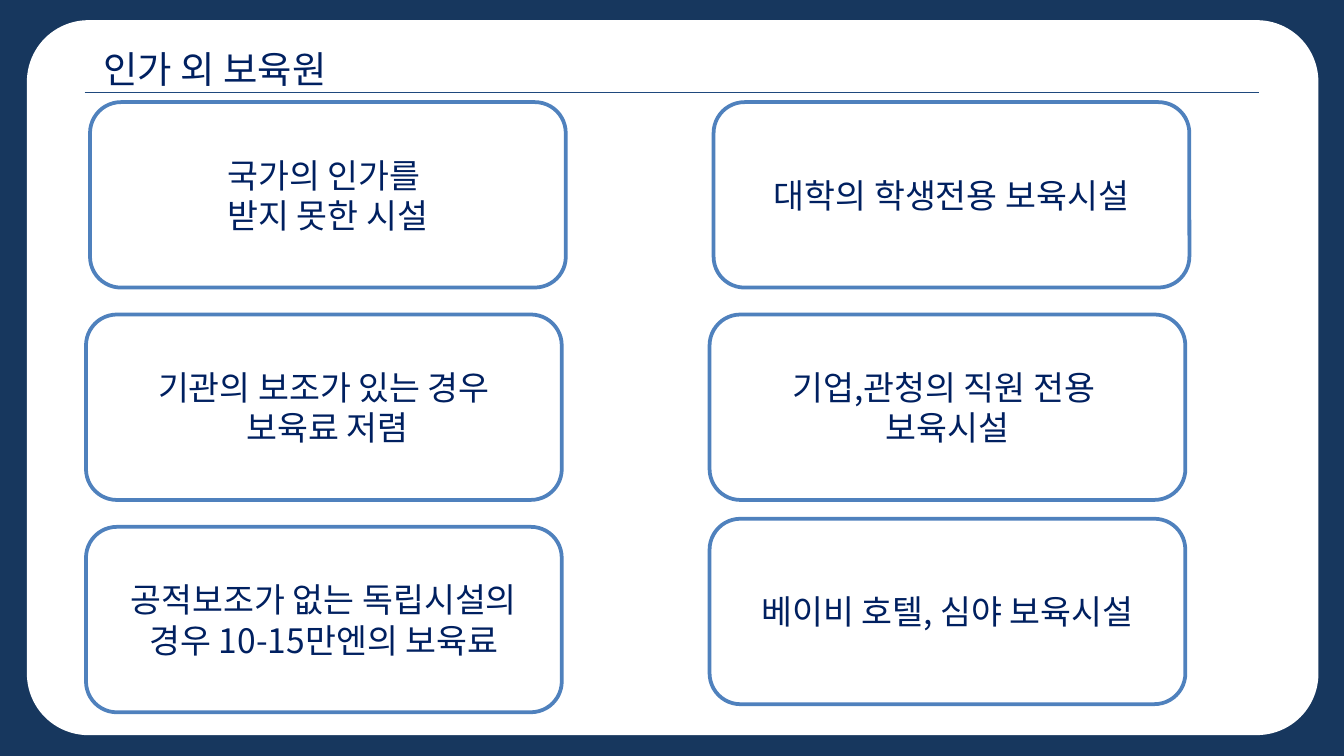
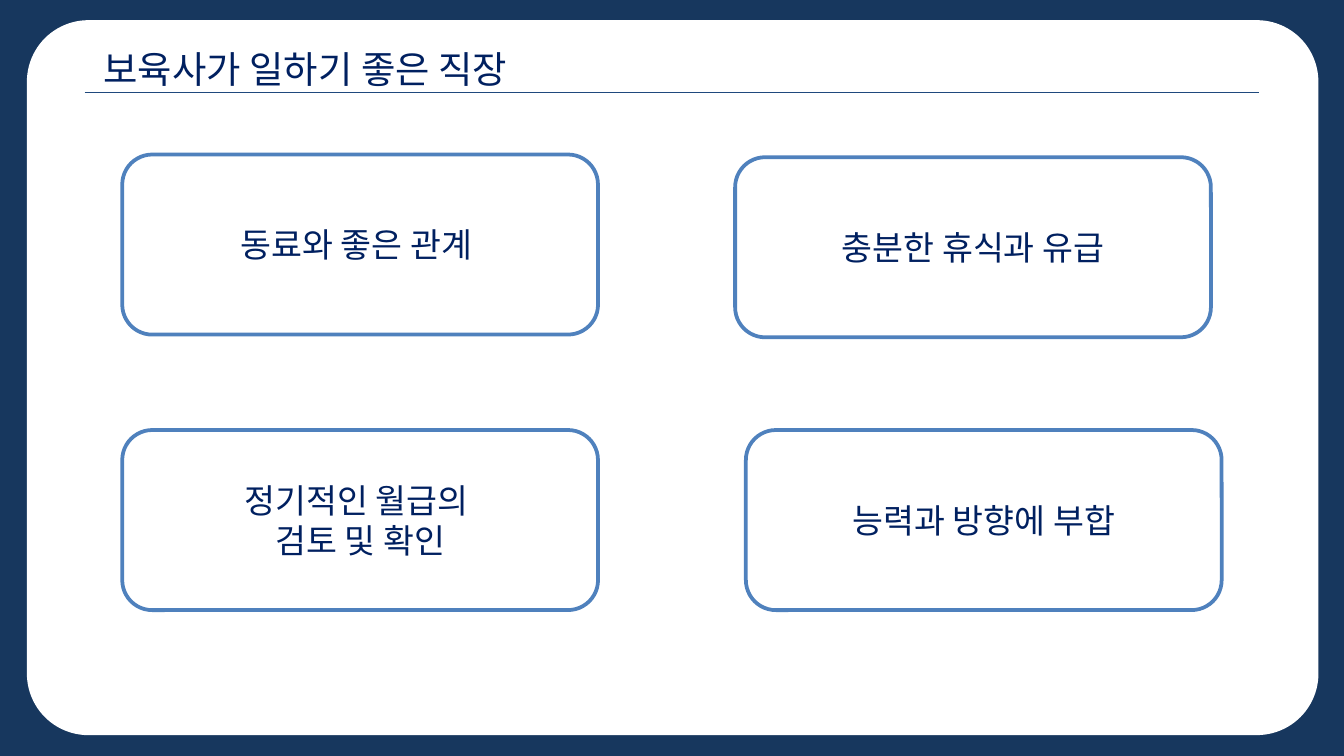
from lxml import etree
from pptx import Presentation
from pptx.dml.color import RGBColor
from pptx.enum import shapes, text
from pptx.oxml.ns import qn
from pptx.util import Inches, Pt

NAVY = RGBColor(0x17, 0x37, 0x5E)
RULE = RGBColor(0x1F, 0x49, 0x7D)
BORDER = RGBColor(0x4F, 0x81, 0xBD)
INK = RGBColor(0x00, 0x20, 0x60)
WHITE = RGBColor(0xFF, 0xFF, 0xFF)
FONT = "Noto Sans CJK KR"
CARD_W = 3.54

# Title, title width, card height, cards as (left, top, lines)
SLIDES = [
    ("인가 외 보육원", 3.54, 1.38, [
        (0.67, 0.76, ["국가의 인가를 ", "받지 못한 시설"]),
        (0.64, 2.34, ["기관의 보조가 있는 경우", " 보육료 저렴"]),
        (0.64, 3.92, ["공적보조가 없는 독립시설의 경우 10-15만엔의 보육료"]),
        (5.31, 0.76, ["대학의 학생전용 보육시설"]),
        (5.28, 2.34, ["기업,관청의 직원 전용 ", "보육시설"]),
        (5.28, 3.86, ["베이비 호텔, 심야 보육시설"]),
    ]),
    ("보육사가 일하기 좋은 직장", 4.02, 1.34, [
        (0.91, 1.15, ["동료와 좋은 관계 "]),
        (0.91, 3.2, ["정기적인 월급의 ", "검토 및 확인"]),
        (5.47, 1.17, ["충분한 휴식과 유급"]),
        (5.55, 3.2, ["능력과 방향에 부합"]),
    ]),
]


def write(tf, lines, size, align):
    """Fill a text frame with one styled paragraph per line."""
    tf.word_wrap = True
    for i, line in enumerate(lines):
        p = tf.add_paragraph() if i else tf.paragraphs[0]
        p.alignment = align
        r = p.add_run()
        r.text = line
        for name, value in {"name": FONT, "size": Pt(size), "bold": False}.items():
            setattr(r.font, name, value)
        r.font.color.rgb = INK
        etree.SubElement(r.font._element, qn("a:ea"), typeface=FONT)


def add_round_rect(s, box):
    """Add a white rounded rectangle without a shadow."""
    sp = s.shapes.add_shape(shapes.MSO_SHAPE.ROUNDED_RECTANGLE, *map(Inches, box))
    sp.shadow.inherit = False
    sp.fill.solid()
    sp.fill.fore_color.rgb = WHITE
    return sp


def add_frame(layout, s):
    """Draw the panel and title rule, then move them to the shared layout."""
    layout.background.fill.solid()
    layout.background.fill.fore_color.rgb = NAVY
    panel = add_round_rect(s, (0.2, 0.15, 9.61, 5.32))
    panel.adjustments[0] = 0.086
    panel.line.fill.background()
    rule = s.shapes.add_connector(shapes.MSO_CONNECTOR.STRAIGHT,
                                  *map(Inches, (0.63, 0.69, 9.37, 0.69)))
    rule.line.color.rgb = RULE
    rule.line.width = Pt(0.75)
    etree.SubElement(rule._element.spPr, qn("a:effectLst"))
    for i, sp in enumerate((panel, rule)):
        layout.shapes._spTree.insert(2 + i, sp._element)


def add_title(s, title, width):
    sp = s.shapes.title
    box = {"left": 0.67, "top": 0.29, "width": width, "height": 0.44}
    for name, value in box.items():
        setattr(sp, name, Inches(value))
    tf = sp.text_frame
    tf.vertical_anchor = text.MSO_ANCHOR.TOP
    tf.auto_size = text.MSO_AUTO_SIZE.SHAPE_TO_FIT_TEXT
    write(tf, [title], 20, text.PP_ALIGN.LEFT)


def add_card(s, box, lines):
    sp = add_round_rect(s, box)
    sp.line.color.rgb = BORDER
    sp.line.width = Pt(2)
    sp.text_frame.vertical_anchor = text.MSO_ANCHOR.MIDDLE
    write(sp.text_frame, lines, 18, text.PP_ALIGN.CENTER)


def main():
    prs = Presentation()
    prs.slide_width = Inches(10)
    prs.slide_height = prs.slide_width * 9 // 16  # widescreen
    layout = prs.slide_layouts[5]  # title only
    for i, (title, title_w, card_h, cards) in enumerate(SLIDES):
        s = prs.slides.add_slide(layout)
        if i == 0:
            add_frame(layout, s)
        add_title(s, title, title_w)
        for left, top, lines in cards:
            add_card(s, (left, top, CARD_W, card_h), lines)
    prs.save("out.pptx")


if __name__ == "__main__":
    main()
